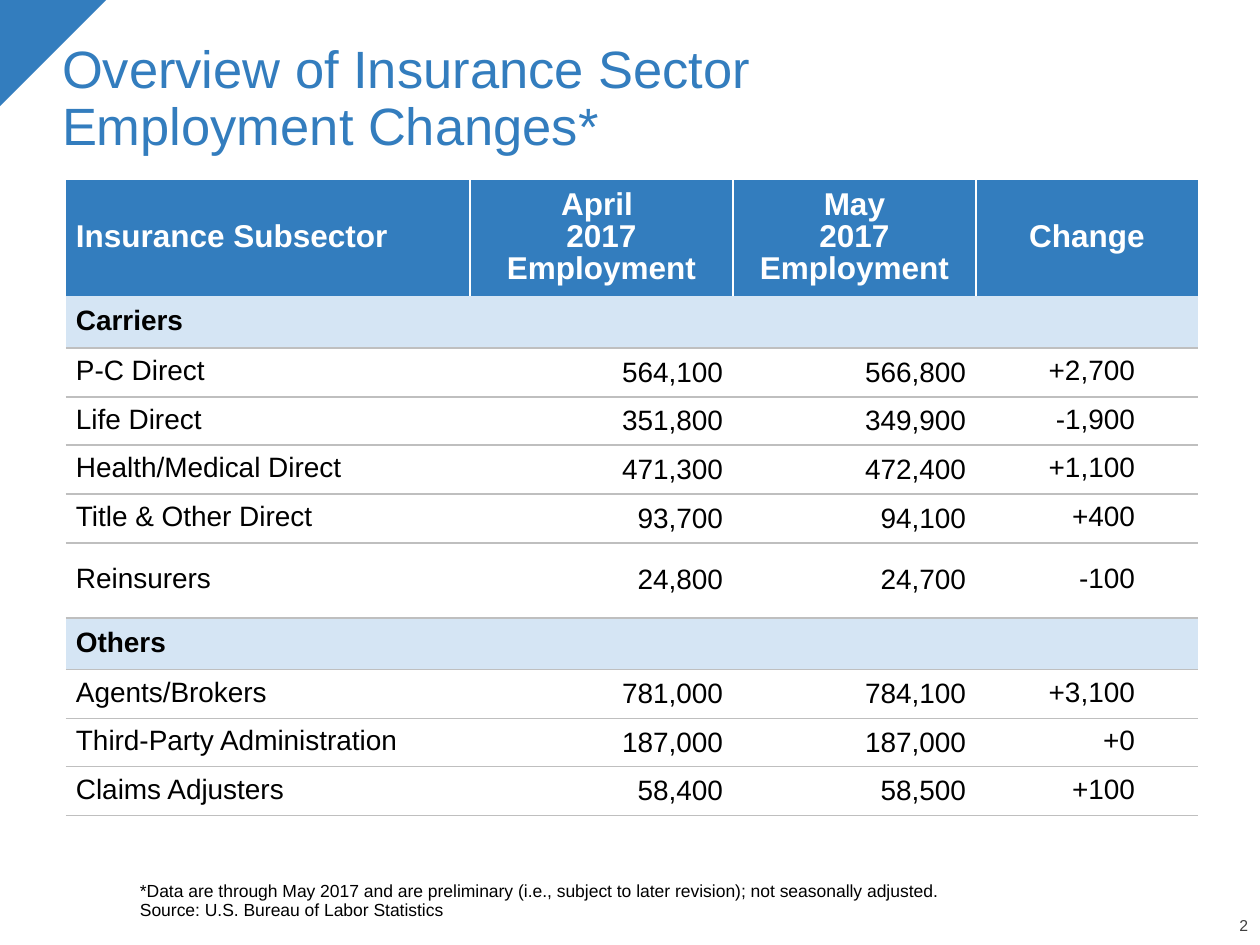
from lxml import etree
from pptx import Presentation
from pptx import util as u
from pptx.dml.color import RGBColor
from pptx.enum import shapes, text
from pptx.oxml import ns

BLUE, PALE, GREY, WHITE, BLACK = "337DBE", "D5E5F4", "BFBFBF", "FFFFFF", "000000"
LEFT, CENTER, RIGHT = text.PP_ALIGN.LEFT, text.PP_ALIGN.CENTER, text.PP_ALIGN.RIGHT
MIDDLE, BOTTOM = text.MSO_ANCHOR.MIDDLE, text.MSO_ANCHOR.BOTTOM
NO_STYLE = "{2D5ABB26-0587-4C30-8999-92F81FD0307C}"

TEXTS = [
    dict(box=(49, 32, 1166, 131), lines=["Overview of Insurance Sector \vEmployment Changes*"],
         size=30, color=BLUE, align=LEFT, insets=(13, 6, 13, 6)),
    dict(box=(140, 863, 1058, 57),
         lines=["*Data are through May 2017 and are preliminary (i.e., subject to later revision); "
                "not seasonally adjusted.\vSource: U.S. Bureau of Labor Statistics"],
         size=10, color=BLACK, align=LEFT, insets=(0, 0, 0, 0)),
    dict(box=(1188, 919, 60, 16), lines=["2"],
         size=9, color="404040", align=RIGHT, insets=(0, 0, 0, 0)),
]
HEADER = [["Insurance Subsector"], ["April \v2017", "Employment"],
          ["May", "2017", "Employment"], ["Change"]]
ROWS = [
    ("Carriers",),
    ("P-C Direct", "564,100", "566,800", "+2,700"),
    ("Life Direct", "351,800", "349,900", "-1,900"),
    ("Health/Medical Direct", "471,300", "472,400", "+1,100"),
    ("Title & Other Direct", "93,700", "94,100", "+400"),
    ("Reinsurers", "24,800", "24,700", "-100"),
    ("Others",),
    ("Agents/Brokers", "781,000", "784,100", "+3,100"),
    ("Third-Party Administration", "187,000", "187,000", "+0"),
    ("Claims Adjusters", "58,400", "58,500", "+100"),
]
TABLE_LEFT, TABLE_TOP = 66, 180
COL_WIDTHS = [404, 263, 243, 222]
ROW_HEIGHTS = [112, 49, 49, 48, 49, 49, 75, 49, 49, 48, 49]


def px(n):
    return u.Emu(round(n * 914400 / 126))


def rgb(value):
    return RGBColor.from_string(value)


def write(tf, lines, size, color, align, bold=False, spacing=0.9):
    for i, line in enumerate(lines):
        p = tf.add_paragraph() if i else tf.paragraphs[0]
        p.alignment, p.line_spacing = align, spacing
        p.text = line
        for r in p.runs or [p.add_run()]:
            for name, value in dict(name="Arial", size=u.Pt(size), bold=bold).items():
                setattr(r.font, name, value)
            r.font.color.rgb = rgb(color)


def set_insets(target, insets):
    for side, inset in zip(("left", "top", "right", "bottom"), insets):
        setattr(target, f"margin_{side}", px(inset))


def add_text(s, box, lines, size, color, align, insets):
    tf = s.shapes.add_textbox(*map(px, box)).text_frame
    tf.word_wrap, tf.vertical_anchor = True, BOTTOM
    set_insets(tf, insets)
    write(tf, lines, size, color, align)


def add_border(cell, side, color, points):
    tc_pr = cell._tc.get_or_add_tcPr()
    ln = etree.SubElement(tc_pr, ns.qn(f"a:ln{side}"), w=str(u.Pt(points)))
    fill = etree.SubElement(ln, ns.qn("a:solidFill"))
    etree.SubElement(fill, ns.qn("a:srgbClr"), val=color)


def format_cell(cell, lines, fill, borders, right_inset=10, **style):
    cell.vertical_anchor = MIDDLE
    set_insets(cell, (10, 7, right_inset, 7))
    for border in borders:
        add_border(cell, *border)
    if fill:
        cell.fill.solid()
        cell.fill.fore_color.rgb = rgb(fill)
    else:
        cell.fill.background()
    write(cell.text_frame, lines, **style)


def add_table(s):
    frame = s.shapes.add_table(len(ROWS) + 1, len(COL_WIDTHS), px(TABLE_LEFT), px(TABLE_TOP),
                               px(sum(COL_WIDTHS)), px(sum(ROW_HEIGHTS)))
    table = frame.table
    table.first_row = table.horz_banding = False
    table._tbl.tblPr.find(ns.qn("a:tableStyleId")).text = NO_STYLE
    for col, width in zip(table.columns, COL_WIDTHS):
        col.width = px(width)
    for row, height in zip(table.rows, ROW_HEIGHTS):
        row.height = px(height)

    last = len(COL_WIDTHS) - 1
    for c, lines in enumerate(HEADER):
        sides = ["L"] * (c > 0) + ["R"] * (c < last)
        format_cell(table.cell(0, c), lines, BLUE, [(side, WHITE, 1.5) for side in sides],
                    size=18, color=WHITE, align=CENTER if c else LEFT, bold=True)
    for r, values in enumerate(ROWS, 1):
        section = len(values) == 1
        sides = ["T", "B"] if r > 1 else ["B"]
        for c in range(last + 1):
            format_cell(table.cell(r, c), [values[c] if c < len(values) else ""],
                        PALE if section else None, [(side, GREY, 1) for side in sides],
                        right_inset=63 if c == last else 10, size=16, color=BLACK,
                        align=RIGHT if c else LEFT, bold=section,
                        spacing=1.0 if 0 < c < last else 0.9)


def main():
    """Build the insurance employment slide."""
    prs = Presentation()
    prs.slide_width, prs.slide_height = px(1260), px(945)
    s = prs.slides.add_slide(prs.slide_layouts[6])
    corner = s.shapes.add_shape(shapes.MSO_SHAPE.RIGHT_TRIANGLE, 0, 0, px(106), px(106))
    corner.rotation = 90
    corner.shadow.inherit = False
    corner.fill.solid()
    corner.fill.fore_color.rgb = rgb(BLUE)
    corner.line.fill.background()
    for item in TEXTS:
        add_text(s, **item)
    add_table(s)
    prs.save("out.pptx")


if __name__ == "__main__":
    main()
